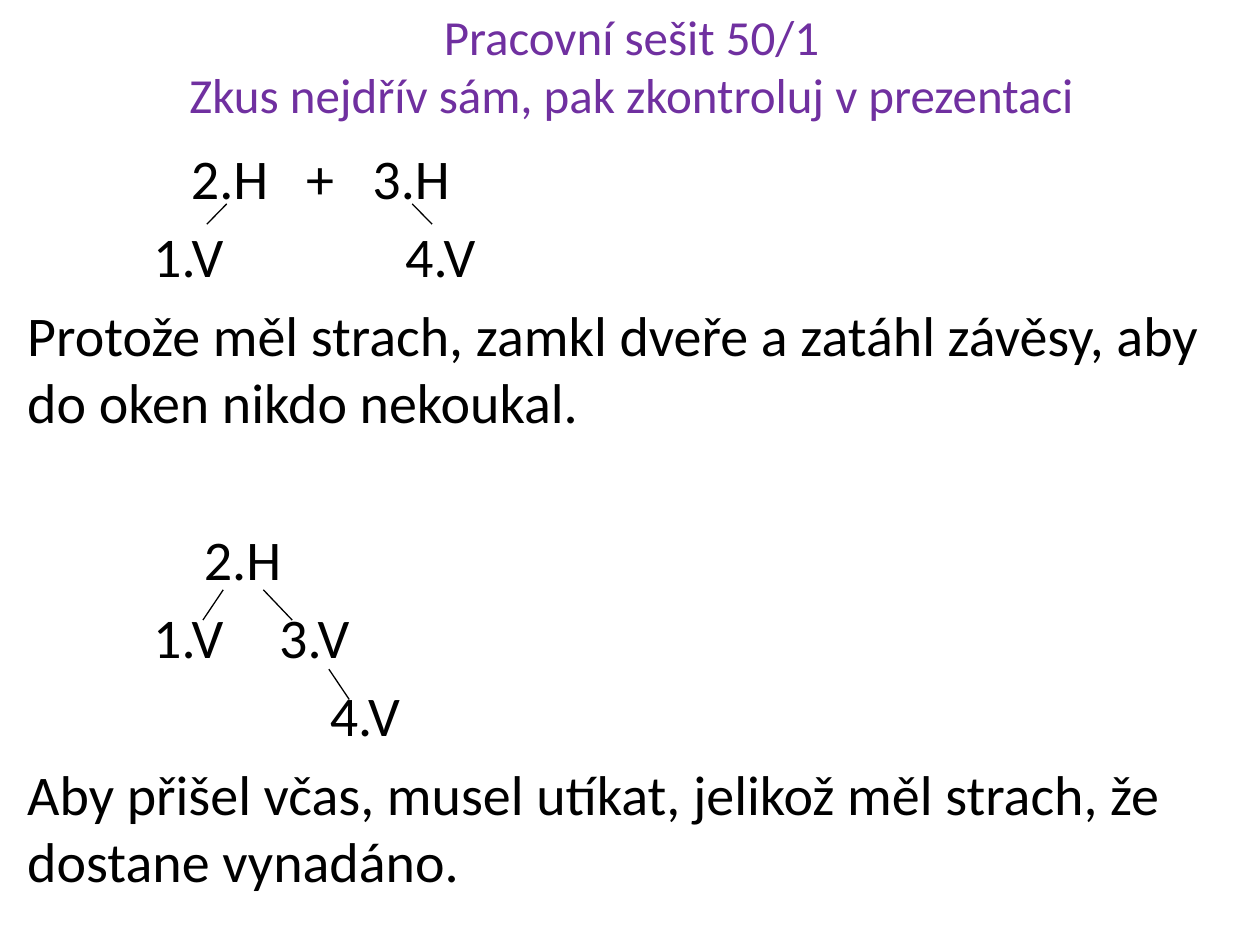
from lxml import etree
from pptx import Presentation
from pptx.dml.color import RGBColor
from pptx.enum.shapes import MSO_CONNECTOR
from pptx.enum.text import MSO_ANCHOR, PP_ALIGN
from pptx.oxml.ns import qn
from pptx.util import Cm, Pt

STRAIGHT = MSO_CONNECTOR.STRAIGHT
MIDDLE = MSO_ANCHOR.MIDDLE
CENTER = PP_ALIGN.CENTER

PURPLE = RGBColor(0x70, 0x30, 0xA0)
BLACK = RGBColor(0, 0, 0)

TITLE_FORMAT = {"name": "Calibri", "size": Pt(28)}
BODY_FORMAT = {"name": "Calibri", "size": Pt(32)}
NORMAL_GAP = 6.4
EXERCISE_GAP = 51

# Text, tab stops in cm from the text edge, space before in points
PARAGRAPHS = [
    ("\t2.H\t+\t3.H", [3.3, 5.62, 6.96], 0),
    ("\t1.V\t4.V", [2.54, 7.62], NORMAL_GAP),
    ("Protože měl strach, zamkl dveře a zatáhl závěsy, aby do oken nikdo nekoukal.",
     [], NORMAL_GAP),
    ("\t2.H", [3.56], EXERCISE_GAP),
    ("\t1.V\t3.V", [2.54, 5.08], NORMAL_GAP),
    ("\t4.V", [6.1], NORMAL_GAP),
    ("Aby přišel včas, musel utíkat, jelikož měl strach, že dostane vynadáno.",
     [], NORMAL_GAP),
]

# Start x, start y, end x, end y in cm
BRANCHES = [
    (4.57, 4.11, 4.17, 4.52),
    (8.31, 4.11, 8.71, 4.52),
    (4.5, 11.89, 4.09, 12.5),
    (5.31, 11.89, 5.89, 12.5),
    (6.63, 13.49, 7.04, 14.1),
]


def format_font(font, color, values):
    for name, value in values.items():
        setattr(font, name, value)
    font.color.rgb = color


deck = Presentation()
deck.slide_width, deck.slide_height = Cm(25.4), Cm(19.05)
page = deck.slides.add_slide(deck.slide_layouts[5])

# Title
title = page.shapes.title
title.left, title.top, title.width, title.height = Cm(1.3), Cm(-0.28), Cm(22.86), Cm(3.18)
title.text_frame.vertical_anchor = MIDDLE
title_para = title.text_frame.paragraphs[0]
title_para.text = "Pracovní sešit 50/1\vZkus nejdřív sám, pak zkontroluj v prezentaci"
title_para.alignment = CENTER
for span in title_para.runs:
    format_font(span.font, PURPLE, TITLE_FORMAT)

# Sentence diagrams and sentences
box = page.shapes.add_textbox(Cm(0.3), Cm(2.77), Cm(24.61), Cm(16))
frame = box.text_frame
frame.word_wrap = True
for index, (text, stops, gap) in enumerate(PARAGRAPHS):
    para = frame.add_paragraph() if index else frame.paragraphs[0]
    if stops:
        tab_list = etree.SubElement(para._p.get_or_add_pPr(), qn("a:tabLst"))
        for stop in stops:
            etree.SubElement(tab_list, qn("a:tab"), pos=str(Cm(stop)), algn="l")
    para.space_before = Pt(gap)
    span = para.add_run()
    span.text = text
    format_font(span.font, BLACK, BODY_FORMAT)

# Branches of the diagrams
for ends in BRANCHES:
    branch = page.shapes.add_connector(STRAIGHT, *[Cm(value) for value in ends])
    branch.line.color.rgb = BLACK
    branch.line.width = Pt(0.75)
    etree.SubElement(branch._element.spPr, qn("a:effectLst"))

deck.save("out.pptx")
